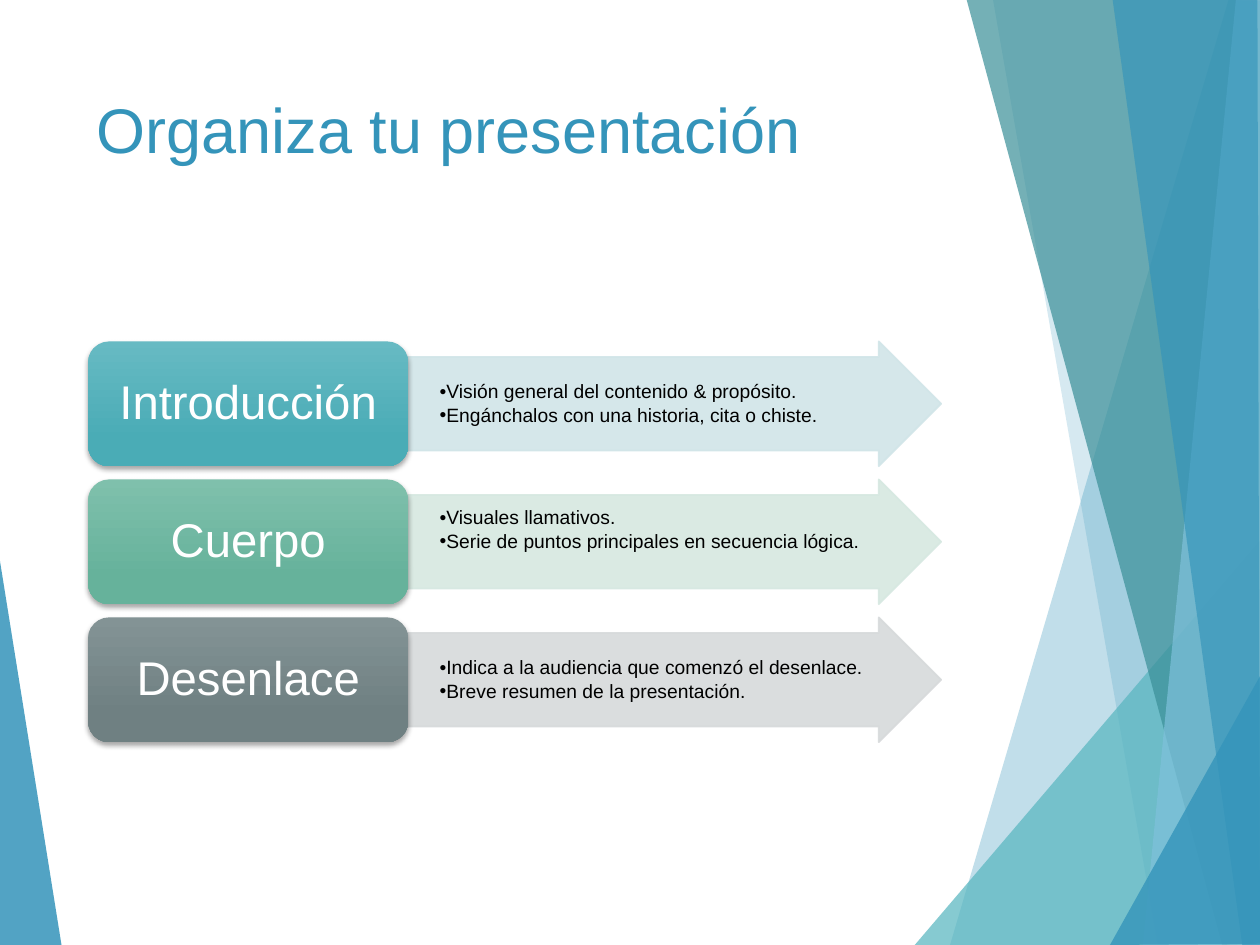
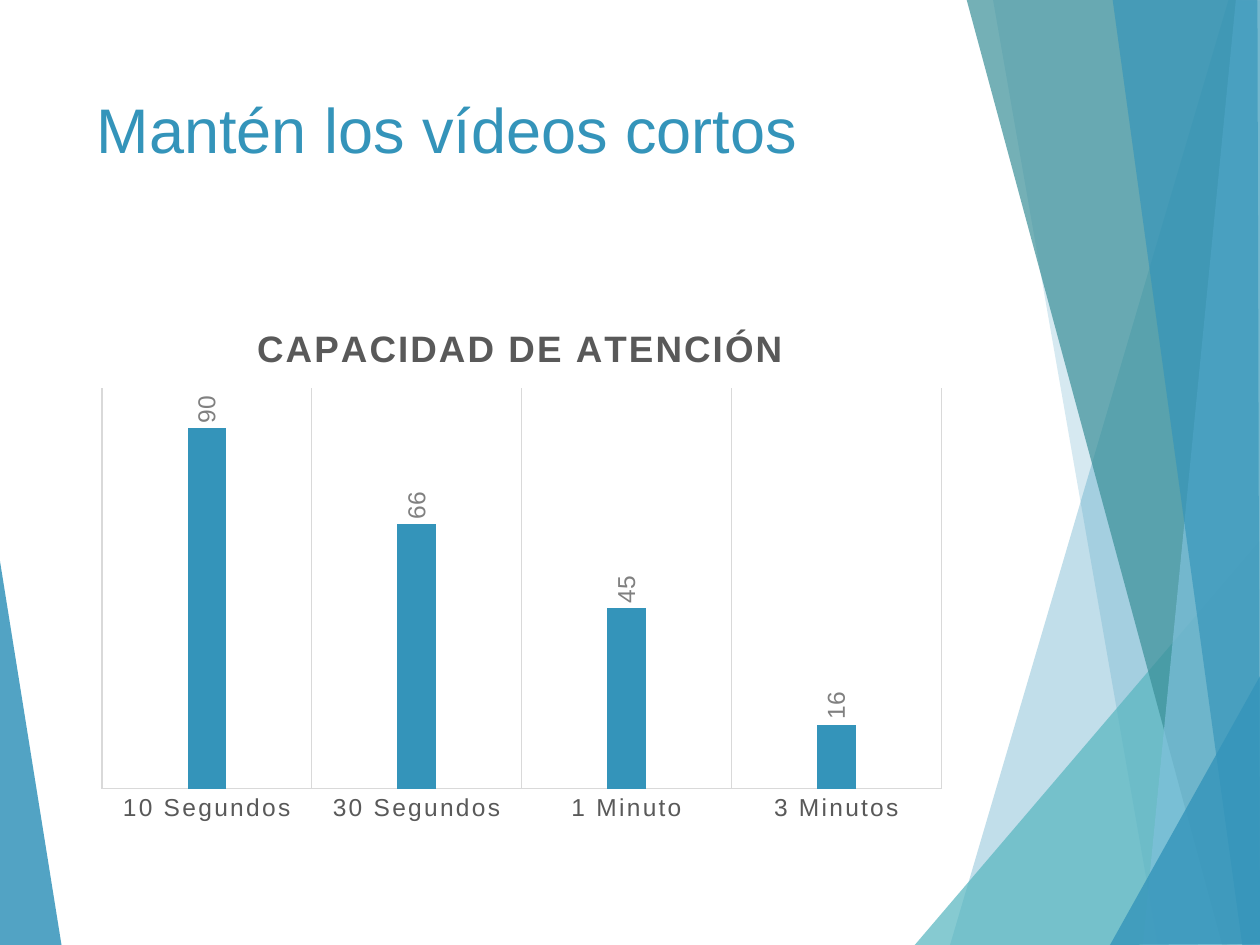
from dataclasses import dataclass

from lxml.etree import SubElement
from pptx import Presentation
from pptx.chart.data import CategoryChartData
from pptx.dml.color import RGBColor
from pptx.enum.chart import XL_CHART_TYPE as ChartType
from pptx.enum.chart import XL_LABEL_POSITION as LabelPosition
from pptx.enum.chart import XL_TICK_MARK as TickMark
from pptx.enum.shapes import MSO_CONNECTOR as Connector
from pptx.enum.shapes import MSO_SHAPE as Shape
from pptx.enum.text import MSO_ANCHOR as Anchor
from pptx.enum.text import PP_ALIGN as Align
from pptx.oxml.ns import qn
from pptx.util import Inches, Pt

FONT = "Arial"
COLOURS = {
    "white": "FFFFFF",
    "black": "000000",
    "blue": "3494BA",
    "turquoise": "58B6C0",
    "petrol": "3A8F98",
    "sky": "7FC1DB",
    "rule": "D9D9D9",
    "axis text": "595959",
    "label text": "808080",
    "intro top": "67BAC3",
    "intro base": "4AACB6",
    "intro arrow": "D1E5E8",
    "body top": "7FC0AC",
    "body base": "66B29B",
    "body arrow": "D6E8E1",
    "end top": "839395",
    "end base": "6F8082",
    "end arrow": "D7DADB",
}


@dataclass(frozen=True)
class Facet:
    colour: str
    opacity: int
    points: tuple[tuple[float, float], ...]


@dataclass(frozen=True)
class Stage:
    label: str
    tone: str
    points: tuple[str, ...]
    bottom_inset: float = 0.01


# Shared background, from back to front
RAYS = (((5.61, 7.5), (10.01, 4.57)), ((7.7, 0), (9.04, 7.5)))
FACETS = (
    Facet("blue", 85, ((-0.01, 4.39), (0.49, 7.51), (-0.01, 7.5))),
    Facet("blue", 30, ((9.75, 0), (7.54, 7.5), (10.02, 7.51), (10.01, 0.01))),
    Facet("blue", 20, ((7.88, -0.01), (9.19, 7.5), (10.01, 7.5), (10.01, -0.01))),
    Facet("turquoise", 72, ((7.26, 7.5), (10, 4.29), (10.01, 7.5))),
    Facet("petrol", 70, ((7.67, -0.01), (9.7, 7.5), (10.01, 7.49), (10.01, -0.01))),
    Facet("sky", 70, ((9.81, -0.01), (9.07, 7.5), (10.01, 7.5), (10, -0.01))),
    Facet("blue", 65, ((8.83, -0.01), (9.86, 7.5), (10, 7.5), (9.98, -0.01))),
    Facet("blue", 80, ((8.81, 7.5), (10.01, 5.35), (10.01, 7.49))),
)

STAGES = (
    Stage("Introducción", "intro", (
        "Visión general del contenido & propósito.",
        "Engánchalos con una historia, cita o chiste.")),
    Stage("Cuerpo", "body", (
        "Visuales llamativos.",
        "Serie de puntos principales en secuencia lógica."), bottom_inset=0.2),
    Stage("Desenlace", "end", (
        "Indica a la audiencia que comenzó el desenlace.",
        "Breve resumen de la presentación.")),
)
STAGE_LEFT, STAGE_TOP, STAGE_PITCH, STAGE_HEIGHT = 0.7, 2.71, 1.095, 0.99
LABEL_WIDTH, ARROW_WIDTH = 2.54, 4.23

ATTENTION = {"10 Segundos": 90, "30 Segundos": 66, "1 Minuto": 45, "3 Minutos": 16}
LETTER_SPACING = "120"


def rgb(name: str) -> RGBColor:
    return RGBColor.from_string(COLOURS[name])


def set_font(font, size: float, colour: str, bold: bool = False) -> None:
    font.name, font.size, font.bold = FONT, Pt(size), bold
    font.color.rgb = rgb(colour)


def set_opacity(shape, percent: int) -> None:
    """Apply one opacity to every solid colour of a shape."""
    for colour in list(shape.element.spPr.iter(qn("a:srgbClr"))):
        SubElement(colour, qn("a:alpha"), val=str(percent * 1000))


def write_text(shape, *lines: str, size: float, colour: str, align=Align.LEFT,
               anchor=Anchor.MIDDLE, insets=(0.1, 0.05, 0.1, 0.05),
               line_spacing: float = 1.0, space_after: float = 0,
               bullet_indent: float | None = None) -> None:
    frame = shape.text_frame
    frame.word_wrap, frame.vertical_anchor = True, anchor
    (frame.margin_left, frame.margin_top,
     frame.margin_right, frame.margin_bottom) = map(Inches, insets)
    for index, line in enumerate(lines):
        para = frame.add_paragraph() if index else frame.paragraphs[0]
        para.alignment, para.line_spacing = align, line_spacing
        para.space_after = Pt(space_after)
        span = para.add_run()
        span.text = line
        set_font(span.font, size, colour)
        if bullet_indent is not None:
            properties = para._p.get_or_add_pPr()
            properties.set("marL", str(Inches(bullet_indent)))
            properties.set("indent", "0")
            SubElement(properties, qn("a:buFont"), typeface=FONT)
            SubElement(properties, qn("a:buChar"), char="•")


def draw_background(page) -> None:
    for start, end in RAYS:
        ray = page.shapes.add_connector(
            Connector.STRAIGHT, *map(Inches, start + end))
        ray.line.color.rgb, ray.line.width = rgb("white"), Pt(0.75)
        SubElement(ray.element.spPr, qn("a:effectLst"))
    for facet in FACETS:
        first, *rest = [(Inches(x), Inches(y)) for x, y in facet.points]
        builder = page.shapes.build_freeform(*first)
        builder.add_line_segments(rest, close=True)
        shape = builder.convert_to_shape()
        shape.shadow.inherit = False
        shape.fill.solid()
        shape.fill.fore_color.rgb = rgb(facet.colour)
        shape.line.fill.background()
        set_opacity(shape, facet.opacity)


def add_page(deck, title: str):
    page = deck.slides.add_slide(deck.slide_layouts[6])
    draw_background(page)
    box = page.shapes.add_textbox(*map(Inches, (0.67, 0.67, 6.94, 1.44)))
    write_text(box, title, size=36, colour="blue", anchor=Anchor.TOP)
    return page


def draw_stage(page, stage: Stage, top: float) -> None:
    # Arrow with the talking points
    arrow = page.shapes.add_shape(
        Shape.RIGHT_ARROW, Inches(STAGE_LEFT + LABEL_WIDTH), Inches(top),
        Inches(ARROW_WIDTH), Inches(STAGE_HEIGHT))
    arrow.adjustments[0], arrow.adjustments[1] = 0.75, 0.5
    arrow.shadow.inherit = False
    arrow.fill.solid()
    arrow.fill.fore_color.rgb = arrow.line.color.rgb = rgb(f"{stage.tone} arrow")
    arrow.line.width = Pt(1)
    set_opacity(arrow, 90)
    write_text(arrow, *stage.points, size=11, colour="black", line_spacing=0.9,
               space_after=1.65, bullet_indent=0.24,
               insets=(0.01, 0.02, 0.01, stage.bottom_inset))

    # Label with a gradient and a soft shadow
    label = page.shapes.add_shape(
        Shape.ROUNDED_RECTANGLE, Inches(STAGE_LEFT), Inches(top),
        Inches(LABEL_WIDTH), Inches(STAGE_HEIGHT))
    label.fill.gradient()
    label.fill.gradient_angle = 270
    for stop, position, part in zip(label.fill.gradient_stops, (0, 0.78), ("top", "base")):
        stop.position, stop.color.rgb = position, rgb(f"{stage.tone} {part}")
    label.line.fill.background()
    label.shadow.inherit = False
    shadow = SubElement(
        label.element.spPr.find(qn("a:effectLst")), qn("a:outerShdw"),
        blurRad=str(Pt(3)), dist=str(Pt(2)), dir="5400000", rotWithShape="0")
    tint = SubElement(shadow, qn("a:srgbClr"), val=COLOURS["black"])
    SubElement(tint, qn("a:alpha"), val="35000")
    write_text(label, stage.label, size=27, colour="white", align=Align.CENTER,
               line_spacing=0.9, insets=(0.1, 0.06, 0.1, 0.06))


def place_in_chart(part, index: int, **fractions: float) -> None:
    """Give a chart part a fixed place, as fractions of the chart."""
    for old in part.findall(qn("c:layout")):
        part.remove(old)
    layout = part.makeelement(qn("c:layout"))
    part.insert(index, layout)
    manual = SubElement(layout, qn("c:manualLayout"))
    if "w" in fractions:
        SubElement(manual, qn("c:layoutTarget"), val="inner")
    for axis in "xy":
        SubElement(manual, qn(f"c:{axis}Mode"), val="edge")
    for name, value in fractions.items():
        SubElement(manual, qn(f"c:{name}"), val=str(value))


def draw_attention_chart(page) -> None:
    data = CategoryChartData()
    data.categories = list(ATTENTION)
    data.add_series("Series 1", list(ATTENTION.values()))
    chart = page.shapes.add_chart(
        ChartType.COLUMN_CLUSTERED, *map(Inches, (0.67, 2.36, 6.94, 4.24)), data).chart
    chart.has_legend = False
    set_font(chart.font, 10, "black")

    # Title
    chart.has_title = True
    span = chart.chart_title.text_frame.paragraphs[0].add_run()
    span.text = "CAPACIDAD DE ATENCIÓN"
    set_font(span.font, 21, "axis text", bold=True)

    # Axes
    values, categories = chart.value_axis, chart.category_axis
    values.minimum_scale, values.maximum_scale = 0, 100
    values.has_major_gridlines = values.visible = False
    values.format.line.fill.background()
    categories.has_major_gridlines = True
    categories.major_tick_mark = categories.minor_tick_mark = TickMark.NONE
    set_font(categories.tick_labels.font, 14, "axis text")
    for line in (categories.format.line, categories.major_gridlines.format.line):
        line.color.rgb, line.width = rgb("rule"), Pt(0.75)

    # Columns and their labels
    plot = chart.plots[0]
    plot.gap_width, plot.overlap, plot.vary_by_categories = 444, -90, False
    series = plot.series[0]
    series.format.fill.solid()
    series.format.fill.fore_color.rgb = rgb("blue")
    labels = series.data_labels
    labels.show_value, labels.position = True, LabelPosition.OUTSIDE_END
    set_font(labels.font, 14, "label text")

    # Placement, letter spacing and upright labels
    root = chart.element
    title, plot_area, category_axis = (
        root.find(f".//{qn(tag)}") for tag in ("c:title", "c:plotArea", "c:catAx"))
    place_in_chart(title, 1, x=0.19, y=0.04)
    place_in_chart(plot_area, 0, x=0.02, y=0.17, w=0.96, h=0.75)
    for part in (title, category_axis):
        for properties in part.iter(qn("a:defRPr"), qn("a:rPr")):
            properties.set("spc", LETTER_SPACING)
    body = root.find(f".//{qn('c:dLbls')}/{qn('c:txPr')}/{qn('a:bodyPr')}")
    body.set("rot", "-5400000")
    body.set("vert", "horz")


def main() -> None:
    deck = Presentation()
    deck.slide_width, deck.slide_height = Inches(10), Inches(7.5)

    page = add_page(deck, "Organiza tu presentación")
    for index, stage in enumerate(STAGES):
        draw_stage(page, stage, STAGE_TOP + index * STAGE_PITCH)

    page = add_page(deck, "Mantén los vídeos cortos")
    draw_attention_chart(page)

    deck.save("out.pptx")


if __name__ == "__main__":
    main()
